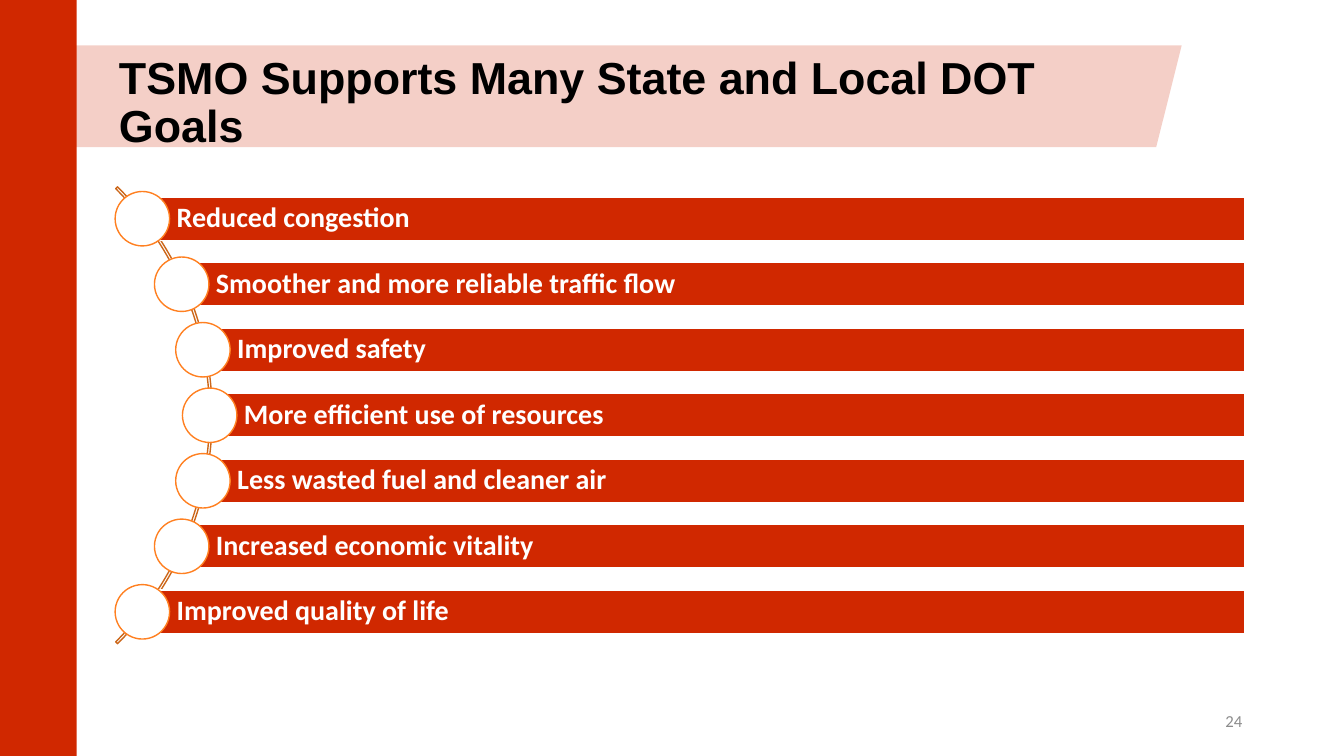
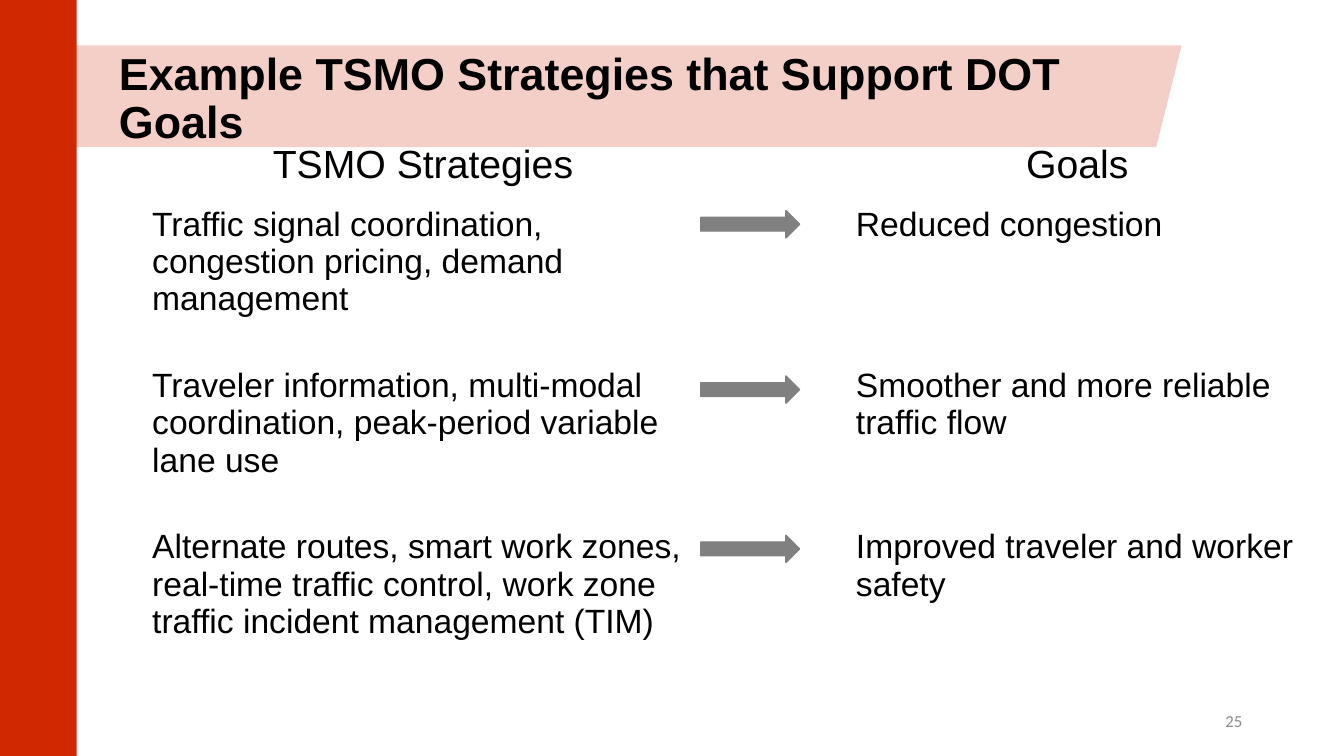
"""Build two slides on how TSMO supports the goals of transport departments."""
from math import sqrt

from lxml.etree import SubElement
from pptx import Presentation
from pptx.dml.color import RGBColor
from pptx.enum.shapes import MSO_SHAPE as SHAPE
from pptx.enum.text import MSO_ANCHOR as ANCHOR, MSO_AUTO_SIZE as AUTO, PP_ALIGN as ALIGN
from pptx.oxml.ns import qn
from pptx.util import Inches, Pt

RED = RGBColor(0xD0, 0x28, 0x00)
ORANGE = RGBColor(0xFF, 0x80, 0x21)
RUST = RGBColor(0xCC, 0x67, 0x1A)
ARROW_GREY = RGBColor(0x80, 0x80, 0x80)
NUMBER_GREY = RGBColor(0x8C, 0x8C, 0x8C)
BLACK = RGBColor(0, 0, 0)
WHITE = RGBColor(0xFF, 0xFF, 0xFF)
NO_STYLE = "{2D5ABB26-0587-4C30-8999-92F81FD0307C}"

GOALS_TITLE = "TSMO Supports Many State and Local DOT Goals"
GOALS = [
    "Reduced congestion",
    "Smoother and more reliable traffic flow",
    "Improved safety",
    "More efficient use of resources",
    "Less wasted fuel and cleaner air",
    "Increased economic vitality",
    "Improved quality of life",
]
STRATEGIES_TITLE = "Example TSMO Strategies that Support DOT Goals"
STRATEGIES = [
    ("TSMO Strategies", "Goals"),
    ("Traffic signal coordination, congestion pricing, demand management",
     "Reduced congestion"),
    ("Traveler information, multi-modal coordination, peak-period variable lane use",
     "Smoother and more reliable traffic flow"),
    ("Alternate routes, smart work zones, real-time traffic control, "
     "work zone traffic incident management (TIM)",
     "Improved traveler and worker safety"),
]
COLUMNS = (5.57, 1.41, 4.59)
HEADER_HEIGHT, ROW_HEIGHT = 0.71, 1.6
ARROW_TOPS = (2.09, 3.73, 5.31)

ARC_X, ARC_Y, ARC_SIZE = -1.1, 4.12, 6.41
DOT_RADIUS, DOT_SIZE = 3.18, 0.54
BAR_RIGHT, BAR_HEIGHT, BAR_PITCH = 12.35, 0.43, 0.65


def inches(*lengths):
    return [Inches(length) for length in lengths]


def add_shape(slide, kind, box, fill=None, line=None):
    shape = slide.shapes.add_shape(kind, *inches(*box))
    shape.shadow.inherit = False
    if fill is None:
        shape.fill.background()
    else:
        shape.fill.solid()
        shape.fill.fore_color.rgb = fill
    if line is None:
        shape.line.fill.background()
    else:
        shape.line.color.rgb = line
        shape.line.width = Pt(1)
    return shape


def write(frame, text, size, font, color, bold=False, align=ALIGN.LEFT, spacing=None):
    paragraph = frame.paragraphs[0]
    paragraph.alignment = align
    paragraph.line_spacing = spacing
    run = paragraph.add_run()
    run.text = text
    run.font.size = Pt(size)
    run.font.name = font
    run.font.bold = bold
    run.font.color.rgb = color


def decorate_layout(layout, slide):
    for placeholder in list(layout.placeholders)[1:]:
        placeholder.element.getparent().remove(placeholder.element)
    band = add_shape(slide, SHAPE.PARALLELOGRAM, (0.24, 0.45, 11.48, 1.01), RED)
    band.adjustments[0] = 0.25
    color = next(band.element.iter(qn("a:srgbClr")))
    SubElement(color, qn("a:alpha"), val="22000")
    side = add_shape(slide, SHAPE.RECTANGLE, (0, 0, 0.76, 7.5), RED)
    for place, shape in enumerate((band, side), 2):
        layout.shapes.element.insert(place, shape.element)


def add_title(slide, text, top, height):
    title = slide.shapes.title
    title.left, title.top, title.width, title.height = inches(1.08, top, 9.84, height)
    frame = title.text_frame
    frame.auto_size = AUTO.NONE
    frame.vertical_anchor = ANCHOR.TOP
    write(frame, text, 32, "Arial", BLACK, bold=True, spacing=0.9)


def add_number(slide, number):
    frame = slide.shapes.add_textbox(*inches(9.42, 6.95, 3, 0.4)).text_frame
    frame.word_wrap = True
    frame.vertical_anchor = ANCHOR.MIDDLE
    write(frame, str(number), 12, "Calibri", NUMBER_GREY, align=ALIGN.RIGHT)


def add_goals(slide):
    arc_box = (ARC_X - ARC_SIZE / 2, ARC_Y - ARC_SIZE / 2, ARC_SIZE, ARC_SIZE)
    arc = add_shape(slide, SHAPE.BLOCK_ARC, arc_box, line=RUST)
    for index, value in enumerate((189, 27, 0.004)):
        arc.adjustments[index] = value
    for index, goal in enumerate(GOALS):
        offset = (index - (len(GOALS) - 1) / 2) * BAR_PITCH
        x, y = ARC_X + sqrt(DOT_RADIUS ** 2 - offset ** 2), ARC_Y + offset
        bar_box = (x, y - BAR_HEIGHT / 2, BAR_RIGHT - x, BAR_HEIGHT)
        frame = add_shape(slide, SHAPE.RECTANGLE, bar_box, RED, WHITE).text_frame
        frame.margin_left = Inches(0.34)
        frame.margin_top = frame.margin_right = frame.margin_bottom = Inches(0.06)
        frame.vertical_anchor = ANCHOR.MIDDLE
        write(frame, goal, 20, "Calibri", WHITE, bold=True, spacing=0.9)
        dot_box = (x - DOT_SIZE / 2, y - DOT_SIZE / 2, DOT_SIZE, DOT_SIZE)
        add_shape(slide, SHAPE.OVAL, dot_box, WHITE, ORANGE)


def add_strategies(slide):
    heights = [HEADER_HEIGHT] + [ROW_HEIGHT] * (len(STRATEGIES) - 1)
    grid = slide.shapes.add_table(
        len(heights), len(COLUMNS), *inches(1.41, 1.28, sum(COLUMNS), sum(heights)))
    next(grid.element.iter(qn("a:tableStyleId"))).text = NO_STYLE
    table = grid.table
    table.first_row = table.horz_banding = False
    for column, width in zip(table.columns, COLUMNS):
        column.width = Inches(width)
    for row, height in zip(table.rows, heights):
        row.height = Inches(height)
    for cell in table.iter_cells():
        cell.fill.background()
    for index, (strategy, goal) in enumerate(STRATEGIES):
        header = index == 0
        for column, text in ((0, strategy), (2, goal)):
            cell = table.cell(index, column)
            cell.vertical_anchor = ANCHOR.MIDDLE if header else ANCHOR.TOP
            write(cell.text_frame, text, 28 if header else 24, "Arial", BLACK,
                  align=ALIGN.CENTER if header else ALIGN.LEFT)
    for top in ARROW_TOPS:
        add_shape(slide, SHAPE.RIGHT_ARROW, (6.95, top, 0.98, 0.27), ARROW_GREY, ARROW_GREY)


def main():
    deck = Presentation()
    deck.slide_width, deck.slide_height = inches(13.33, 7.5)
    layout = deck.slide_layouts[5]
    pages = [
        (24, GOALS_TITLE, 0.5, 0.55, add_goals),
        (25, STRATEGIES_TITLE, 0.46, 1.03, add_strategies),
    ]
    for index, (number, title, top, height, add_content) in enumerate(pages):
        slide = deck.slides.add_slide(layout)
        if index == 0:
            decorate_layout(layout, slide)
        add_title(slide, title, top, height)
        add_content(slide)
        add_number(slide, number)
    deck.save("out.pptx")


if __name__ == "__main__":
    main()
